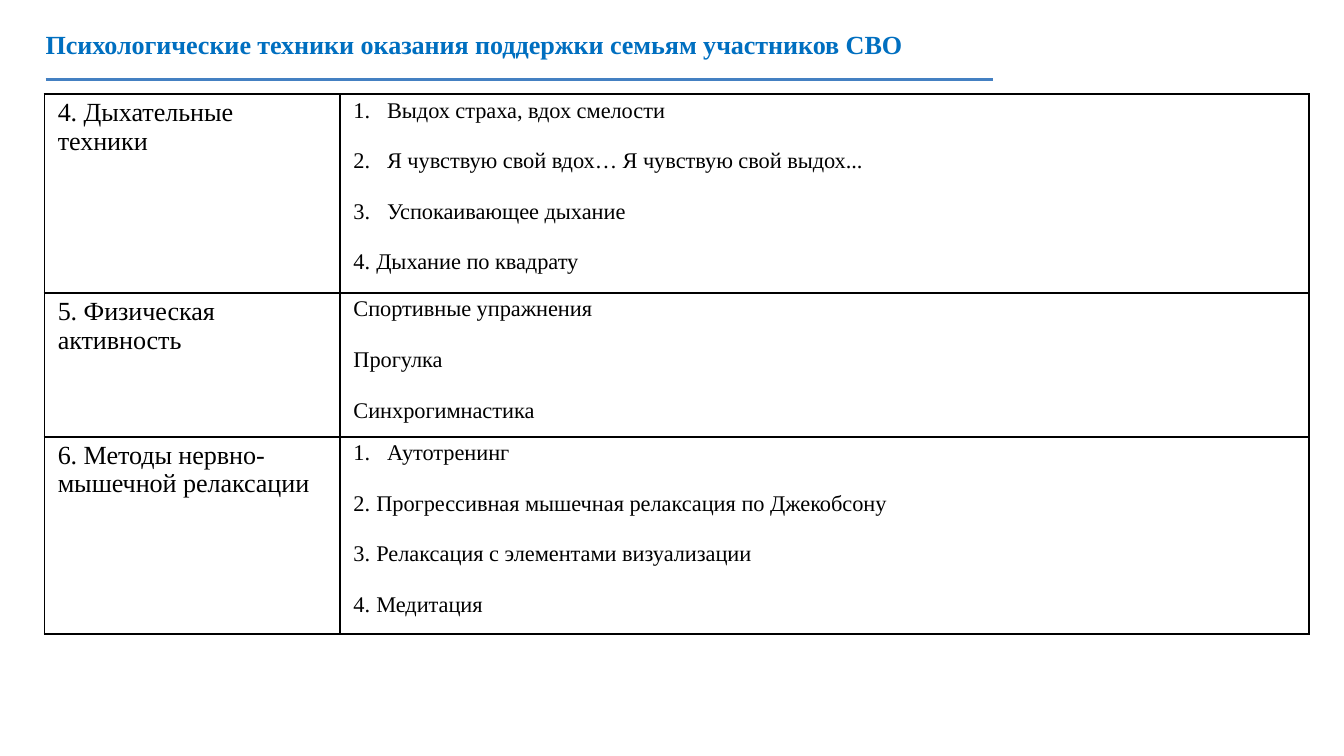
"""Build a slide with a table of psychological support techniques."""
from dataclasses import dataclass

from lxml import etree
from pptx import Presentation
from pptx.dml.color import RGBColor
from pptx.enum.shapes import MSO_CONNECTOR
from pptx.oxml.ns import qn
from pptx.util import Inches, Pt

STRAIGHT = MSO_CONNECTOR.STRAIGHT
BORDER_TAGS = ("a:lnL", "a:lnR", "a:lnT", "a:lnB")

TITLE = "Психологические техники оказания поддержки семьям участников СВО"
WIDE, NARROW, PLAIN = (0.35, -0.25), (0.27, -0.17), (0.1, 0)
COLUMN_WIDTHS = (2.2, 7.21)
ROW_HEIGHTS = (1.48, 1.07, 1.47)
ROWS = [
    (["4. Дыхательные", "техники"],
     [("Выдох страха, вдох смелости", WIDE),
      ("Я чувствую свой вдох… Я чувствую свой выдох...", WIDE),
      ("Успокаивающее дыхание", WIDE),
      ("Дыхание по квадрату", NARROW)]),
    (["5. Физическая активность"],
     [("Спортивные упражнения", PLAIN),
      ("Прогулка", PLAIN),
      ("Синхрогимнастика", PLAIN)]),
    (["6. Методы нервно-", "мышечной релаксации"],
     [("Аутотренинг", WIDE),
      ("Прогрессивная мышечная релаксация по Джекобсону", NARROW),
      ("Релаксация с элементами визуализации", NARROW),
      ("Медитация", NARROW)]),
]


@dataclass(frozen=True)
class Theme:
    font: str = "Times New Roman"
    title_color: RGBColor = RGBColor(0x00, 0x6F, 0xC0)
    rule_color: RGBColor = RGBColor(0x44, 0x80, 0xC2)
    text_color: RGBColor = RGBColor(0x00, 0x00, 0x00)
    heading_size: float = 14
    body_size: float = 12
    heading_tracking: int = -6
    body_tracking: int = -4
    first_gap: float = 2.4
    item_gap: float = 13.8
    border_width: float = 1
    rule_width: float = 1.5


class SlideBuilder:
    def __init__(self, slide, theme):
        self.slide = slide
        self.theme = theme

    def format_paragraph(self, paragraph, size, color, tracking, gap, bold=False):
        paragraph.space_before = Pt(gap)
        for run in paragraph.runs:
            run.font.name = self.theme.font
            run.font.size = Pt(size)
            run.font.bold = bold
            run.font.color.rgb = color
            run.font._element.set("spc", str(tracking))

    def indent(self, paragraph, layout):
        properties = paragraph._p.get_or_add_pPr()
        margin, first_line = layout
        properties.set("marL", str(Inches(margin)))
        properties.set("indent", str(Inches(first_line)))
        if layout != PLAIN:
            numbering = etree.SubElement(properties, qn("a:buAutoNum"))
            numbering.set("type", "arabicPeriod")

    def title(self, text, left, top, width, height):
        shape = self.slide.shapes.add_textbox(
            Inches(left), Inches(top), Inches(width), Inches(height))
        frame = shape.text_frame
        frame.word_wrap = True
        frame.margin_left = frame.margin_top = Inches(0.01)
        frame.margin_right = frame.margin_bottom = 0
        frame.text = text
        self.format_paragraph(frame.paragraphs[0], self.theme.heading_size,
                              self.theme.title_color, self.theme.heading_tracking,
                              1, bold=True)

    def rule(self, left, top, width):
        connector = self.slide.shapes.add_connector(
            STRAIGHT, Inches(left), Inches(top), Inches(left + width), Inches(top))
        connector.line.color.rgb = self.theme.rule_color
        connector.line.width = Pt(self.theme.rule_width)
        etree.SubElement(connector._element.spPr, qn("a:effectLst"))

    def cell(self, cell, items, size, tracking, item_gap):
        cell.margin_left = cell.margin_bottom = 0
        cell.margin_right = Inches(0.1)
        cell.margin_top = Inches(0.03)
        cell.text_frame.text = "\n".join(text for text, _ in items)
        for index, (paragraph, (_, layout)) in enumerate(
                zip(cell.text_frame.paragraphs, items)):
            gap = item_gap if index else self.theme.first_gap
            self.format_paragraph(paragraph, size, self.theme.text_color, tracking, gap)
            self.indent(paragraph, layout)
        self.borders(cell)
        cell.fill.background()

    def borders(self, cell):
        properties = cell._tc.get_or_add_tcPr()
        for tag in BORDER_TAGS:
            line = etree.SubElement(properties, qn(tag))
            line.set("w", str(Pt(self.theme.border_width)))
            fill = etree.SubElement(line, qn("a:solidFill"))
            color = etree.SubElement(fill, qn("a:srgbClr"))
            color.set("val", str(self.theme.text_color))

    def table(self, rows, left, top, column_widths, row_heights):
        table = self.slide.shapes.add_table(
            len(rows), len(column_widths), Inches(left), Inches(top),
            Inches(sum(column_widths)), Inches(sum(row_heights))).table
        table.first_row = table.horz_banding = False
        for column, width in zip(table.columns, column_widths):
            column.width = Inches(width)
        for row, height, (heading, techniques) in zip(table.rows, row_heights, rows):
            row.height = Inches(height)
            heading_cell, techniques_cell = row.cells
            self.cell(heading_cell, [(text, PLAIN) for text in heading],
                      self.theme.heading_size, self.theme.heading_tracking, 0)
            self.cell(techniques_cell, techniques, self.theme.body_size,
                      self.theme.body_tracking, self.theme.item_gap)


def main():
    presentation = Presentation()
    presentation.slide_width = Inches(10)
    presentation.slide_height = presentation.slide_width * 9 // 16
    slide = presentation.slides.add_slide(presentation.slide_layouts[6])
    builder = SlideBuilder(slide, Theme())
    builder.rule(0.34, 0.59, 7.05)
    builder.title(TITLE, 0.33, 0.2, 6.76, 0.25)
    builder.table(ROWS, 0.33, 0.7, COLUMN_WIDTHS, ROW_HEIGHTS)
    presentation.save("out.pptx")


if __name__ == "__main__":
    main()
